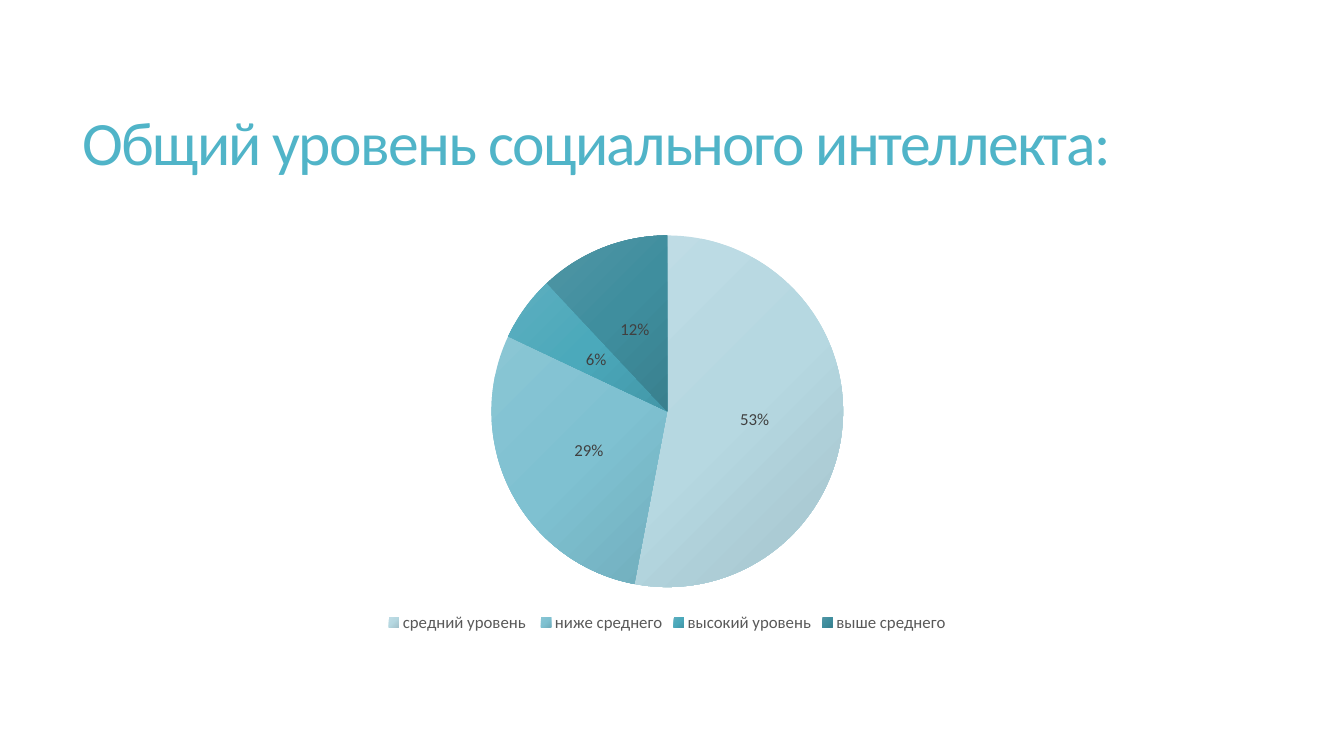
from copy import deepcopy
from typing import NamedTuple

from pptx import Presentation
from pptx.chart.chart import Chart
from pptx.chart.data import CategoryChartData
from pptx.dml.color import RGBColor
from pptx.enum.chart import XL_CHART_TYPE, XL_LABEL_POSITION, XL_LEGEND_POSITION
from pptx.enum.text import MSO_ANCHOR
from pptx.slide import Slide
from pptx.text.text import Font
from pptx.util import Emu, Pt

EMU_PER_PX = 9525
FONT_NAME = "Calibri"
TITLE_COLOR = RGBColor(0x50, 0xB4, 0xC8)
LABEL_COLOR = RGBColor(0x40, 0x40, 0x40)
LEGEND_COLOR = RGBColor(0x59, 0x59, 0x59)
STOP_POSITIONS = (0, 0.5, 1)


class Box(NamedTuple):
    left: int
    top: int
    width: int
    height: int


class Level(NamedTuple):
    name: str
    share: int
    shades: tuple[RGBColor, RGBColor, RGBColor]


LEVELS = [
    Level("средний уровень ", 53,
          (RGBColor(0xBF, 0xDC, 0xE5), RGBColor(0xB6, 0xD8, 0xE1), RGBColor(0xA3, 0xC2, 0xCB))),
    Level("ниже среднего", 29,
          (RGBColor(0x8A, 0xC6, 0xD4), RGBColor(0x7F, 0xC1, 0xD1), RGBColor(0x71, 0xAE, 0xBD))),
    Level("высокий уровень", 6,
          (RGBColor(0x5D, 0xAE, 0xBF), RGBColor(0x4B, 0xA9, 0xBB), RGBColor(0x43, 0x97, 0xA8))),
    Level("выше среднего", 12,
          (RGBColor(0x51, 0x96, 0xA5), RGBColor(0x3F, 0x8E, 0x9E), RGBColor(0x39, 0x80, 0x8E))),
]


def px(length: int) -> Emu:
    return Emu(length * EMU_PER_PX)


def style_font(font: Font, size: int, color: RGBColor) -> None:
    font.name = FONT_NAME
    font.size = Pt(size)
    font.color.rgb = color


def add_text(slide: Slide, text: str, box: Box, *, size: int, color: RGBColor,
             line_spacing: float = 1.0, letter_spacing: float = 0) -> None:
    frame = slide.shapes.add_textbox(*map(px, box)).text_frame
    frame.word_wrap = True
    frame.vertical_anchor = MSO_ANCHOR.MIDDLE
    paragraph = frame.paragraphs[0]
    paragraph.line_spacing = line_spacing
    run = paragraph.add_run()
    run.text = text
    style_font(run.font, size, color)
    run._r.get_or_add_rPr().set("spc", str(round(letter_spacing * 100)))


def shade_slices(chart: Chart, levels: list[Level]) -> None:
    points = chart.plots[0].series[0].points
    for index, level in enumerate(levels):
        slice_format = points[index].format
        slice_format.line.fill.background()
        slice_format.fill.gradient()
        slice_format.fill.gradient_angle = 315
        stop_list = chart.element.xpath(".//c:dPt//a:gsLst")[-1]
        stop_list.append(deepcopy(stop_list[0]))
        for stop, position, shade in zip(slice_format.fill.gradient_stops, STOP_POSITIONS, level.shades):
            stop.position = position
            stop.color.rgb = shade


def add_level_pie(slide: Slide, levels: list[Level], box: Box) -> None:
    shares = CategoryChartData()
    shares.categories = [level.name for level in levels]
    shares.add_series("Series 1", [level.share for level in levels])
    chart = slide.shapes.add_chart(XL_CHART_TYPE.PIE, *map(px, box), shares).chart
    chart.has_title = False
    chart.font.name = FONT_NAME
    chart.font.size = Pt(10)
    chart.has_legend = True
    chart.legend.position = XL_LEGEND_POSITION.BOTTOM
    chart.legend.include_in_layout = False
    style_font(chart.legend.font, 12, LEGEND_COLOR)

    pie = chart.plots[0]
    pie.vary_by_categories = True
    pie.has_data_labels = True
    labels = pie.data_labels
    labels.show_percentage = True
    labels.show_value = False
    labels.number_format = "0%"
    labels.number_format_is_linked = False
    labels.position = XL_LABEL_POSITION.CENTER
    style_font(labels.font, 12, LABEL_COLOR)
    shade_slices(chart, levels)


def main() -> None:
    """Build the slide on the overall level of social intelligence."""
    presentation = Presentation()
    presentation.slide_width = px(1280)
    presentation.slide_height = px(720)
    slide = presentation.slides.add_slide(presentation.slide_layouts[6])
    add_text(slide, "Общий уровень социального интеллекта:", Box(69, 53, 1131, 174),
             size=44, color=TITLE_COLOR, line_spacing=0.85, letter_spacing=-1.2)
    add_level_pie(slide, LEVELS, Box(71, 211, 1129, 395))
    presentation.save("out.pptx")


if __name__ == "__main__":
    main()
